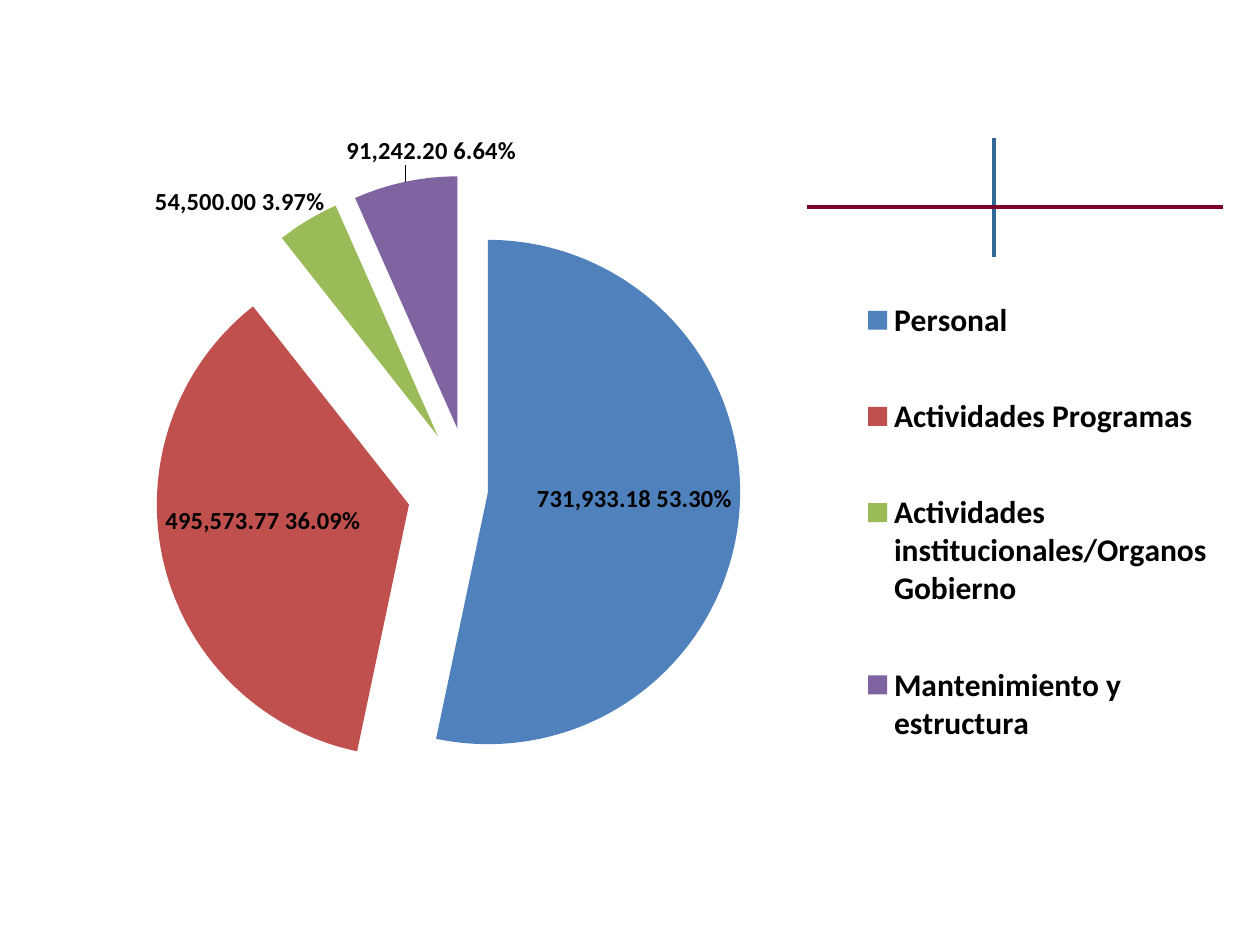
from copy import deepcopy

from lxml import etree
from pptx import Presentation
from pptx import util as u
from pptx.chart.data import CategoryChartData
from pptx.dml.color import RGBColor
from pptx.enum import chart as charts, shapes
from pptx.oxml import parse_xml
from pptx.oxml.ns import nsdecls, qn

THEME = {
    "font": "Calibri",
    "text": "000000",
    "legend_size": 18,
    "label_size": 14,
    "rule_width": 2.25,
}
SLICES = [  # category, amount, colour, explosion, label side, label shift in points
    ("Personal", 731933.18, "4F81BD", 7, "inEnd", (0.5, -2)),
    ("Actividades Programas", 495573.77, "C0504D", 25, "inEnd", (-3, -14)),
    ("Actividades institucionales/Organos Gobierno", 54500, "9BBB59", 25, "outEnd", (12, 2)),
    ("Mantenimiento y estructura", 91242.2, "8064A2", 25, "outEnd", (64.5, -5)),
]
EXPLOSION = 25
RULES = [  # start x, start y, end x, end y, colour
    (568.08, 78.8, 568.08, 147, "336699"),
    (699, 118.3, 461.3, 118.3, "7A0029"),
]
CHART_FRAME = (20.16, 77.04, 680.4, 442.08)
PLOT_LAYOUT = (0.017, 0.052, 0.697, 0.815)
LEGEND_LAYOUT = (0.704, 0.14, 0.29, 0.72)


def add_rule(page, x1, y1, x2, y2, color):
    rule = page.shapes.add_connector(
        shapes.MSO_CONNECTOR.STRAIGHT, *map(u.Pt, (x1, y1, x2, y2)))
    rule.line.color.rgb = RGBColor.from_string(color)
    rule.line.width = u.Pt(THEME["rule_width"])
    etree.SubElement(rule._element.spPr, qn("a:effectLst"))


def manual_layout(bounds, inner=False):
    """Layout of a chart part by fractions: four place it, two shift it."""
    target = '<c:layoutTarget val="inner"/>' if inner else ""
    modes = '<c:xMode val="edge"/><c:yMode val="edge"/>' if len(bounds) == 4 else ""
    sizes = "".join(f'<c:{key} val="{value}"/>' for key, value in zip("xywh", bounds))
    return parse_xml(f'<c:layout {nsdecls("c")}><c:manualLayout>{target}{modes}{sizes}'
                     '</c:manualLayout></c:layout>')


def value_element(tag, value):
    element = etree.Element(qn(tag))
    element.set("val", str(value))
    return element


def style_font(font, size):
    font.name = THEME["font"]
    font.size = u.Pt(size)
    font.bold = True
    font.color.rgb = RGBColor.from_string(THEME["text"])


def label_slices(series):
    """Show amount and share on one line at each slice's own label position."""
    labels = series.data_labels
    labels.show_value = labels.show_percentage = True
    labels.number_format = "0.00%"
    labels.number_format_is_linked = False
    labels.position = charts.XL_LABEL_POSITION.INSIDE_END
    style_font(labels.font, THEME["label_size"])
    root = labels._element
    root.find(f".//{qn('a:bodyPr')}").set("wrap", "none")
    separator = etree.Element(qn("c:separator"))
    separator.text = " "
    root.find(qn("c:showBubbleSize")).addnext(separator)

    shared = [part for part in root if part.tag != qn("c:showLeaderLines")]
    for index, (*_, side, shift) in enumerate(SLICES):
        label = etree.Element(qn("c:dLbl"))
        label.append(value_element("c:idx", index))
        label.append(manual_layout(
            [move / size for move, size in zip(shift, CHART_FRAME[2:])]))
        label.extend(deepcopy(part) for part in shared)
        label.find(qn("c:dLblPos")).set("val", side)
        root.insert(index, label)


def color_slices(series):
    for index, (_, _, color, explosion, _, _) in enumerate(SLICES):
        fill = series.points[index].format.fill
        fill.solid()
        fill.fore_color.rgb = RGBColor.from_string(color)
        if explosion != EXPLOSION:
            point = series._element.findall(qn("c:dPt"))[index]
            point.find(qn("c:spPr")).addprevious(value_element("c:explosion", explosion))
    series._element.find(qn("c:dPt")).addprevious(value_element("c:explosion", EXPLOSION))


def add_budget_pie(page):
    data = CategoryChartData(number_format="#,##0.00")
    data.categories = [row[0] for row in SLICES]
    data.add_series("Series 1", [row[1] for row in SLICES])
    chart = page.shapes.add_chart(
        charts.XL_CHART_TYPE.PIE, *map(u.Pt, CHART_FRAME), data).chart
    chart.has_title = False
    style_font(chart.font, THEME["legend_size"])

    plot = chart.plots[0]
    plot.vary_by_categories = True
    color_slices(plot.series[0])
    label_slices(plot.series[0])

    area = chart._chartSpace.chart.plotArea
    for old in area.findall(qn("c:layout")):
        area.remove(old)
    area.insert(0, manual_layout(PLOT_LAYOUT, inner=True))

    chart.has_legend = True
    legend = chart.legend
    legend.position = charts.XL_LEGEND_POSITION.RIGHT
    legend.include_in_layout = False
    style_font(legend.font, THEME["legend_size"])
    element = legend._element
    for old in element.findall(qn("c:layout")):
        element.remove(old)
    element.find(qn("c:legendPos")).addnext(manual_layout(LEGEND_LAYOUT))


def main():
    deck = Presentation()
    deck.slide_width, deck.slide_height = u.Pt(720), u.Pt(540)
    page = deck.slides.add_slide(deck.slide_layouts[6])
    for rule in RULES:
        add_rule(page, *rule)
    add_budget_pie(page)
    deck.save("out.pptx")


if __name__ == "__main__":
    main()
